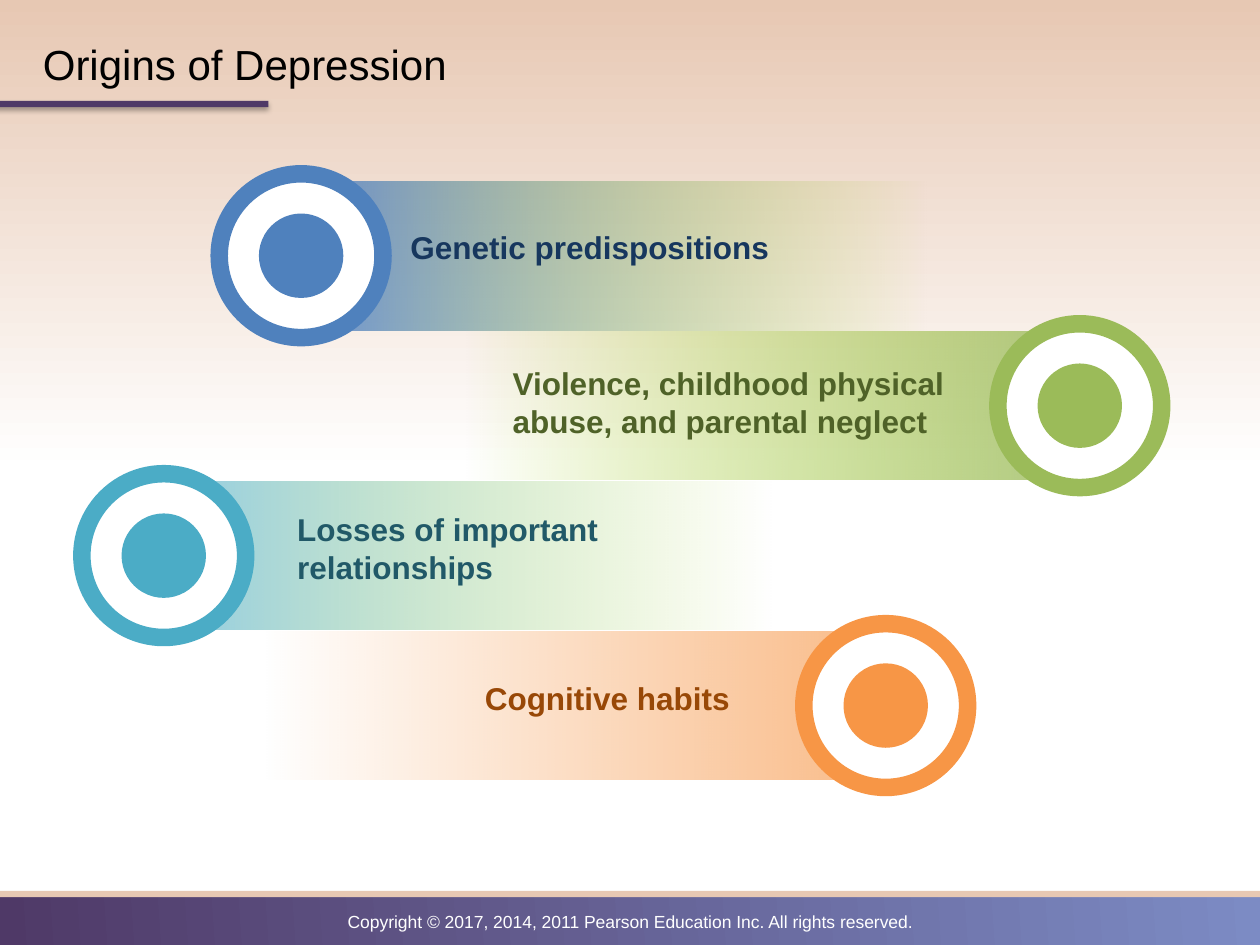
"""Build the slide on the origins of depression."""
from lxml import etree
from pptx import Presentation
from pptx.dml.color import RGBColor
from pptx.enum import shapes, text
from pptx.oxml import ns
from pptx.util import Inches, Pt

COLORS = {
    "white": "FFFFFF", "black": "000000", "sand": "E7C8B3",
    "plum": "4F3967", "periwinkle": "7C8BC4", "lime": "99CC00",
    "blue": "4F81BD", "navy": "17375E", "green": "9BBB59", "moss": "4F6228",
    "teal": "4BACC6", "deep teal": "215968", "orange": "F79646", "rust": "984807",
}
TITLE = "Origins of Depression"
COPYRIGHT = "Copyright © 2017, 2014, 2011 Pearson Education Inc. All rights reserved."
ORIGINS = [
    dict(label="Genetic predispositions", color="blue", ink="navy", fade="lime",
         alpha=75, side="left", bar=2.8, ring=1.74, box=(3.16, 1.76, 3.33, 0.4)),
    dict(label="Violence, childhood physical abuse, and parental neglect",
         color="green", ink="moss", fade="lime",
         alpha=75, side="right", bar=3.68, ring=7.92, box=(3.97, 2.84, 4.08, 0.71)),
    dict(label="Losses of important relationships", color="teal", ink="deep teal",
         fade="lime", alpha=56, side="left", bar=1.59, ring=0.65,
         box=(2.26, 4, 3.85, 0.71)),
    dict(label="Cognitive habits", color="orange", ink="rust", fade="orange",
         alpha=60, side="right", bar=2.09, ring=6.38, box=(3.75, 5.34, 2.3, 0.4)),
]
BAR_TOP, BAR_PITCH, BAR_WIDTH, BAR_HEIGHT = 1.44, 1.19, 4.56, 1.18
RING, DOT = 1.3, 0.67


def rgb(name):
    return RGBColor.from_string(COLORS[name])


def set_gradient(fill, stops, angle):
    fill.gradient()
    fill.gradient_angle = angle
    for stop, (position, color, alpha) in zip(fill.gradient_stops, stops):
        stop.position = position
        stop.color.rgb = rgb(color)
        if alpha < 100:
            tint = stop._gs.find(ns.qn("a:srgbClr"))
            etree.SubElement(tint, ns.qn("a:alpha"), val=str(alpha * 1000))


def add_shape(page, kind, place, color=None, line=None):
    shape = page.shapes.add_shape(kind, *map(Inches, place))
    shape.shadow.inherit = False
    if color:
        shape.fill.solid()
        shape.fill.fore_color.rgb = rgb(color)
    if line:
        shape.line.color.rgb = rgb(line)
        shape.line.width = Pt(10)
    else:
        shape.line.fill.background()
    return shape


def style(paragraph, size, color, align, bold=False):
    paragraph.alignment = align
    font = paragraph.font
    font.name, font.size, font.bold = "Arial", Pt(size), bold
    font.color.rgb = rgb(color)


def add_text(page, words, place, size, color, align, bold=False):
    box = page.shapes.add_textbox(*map(Inches, place))
    frame = box.text_frame
    frame.word_wrap = True
    frame.text = words
    style(frame.paragraphs[0], size, color, align, bold)


def add_title(page):
    title = page.shapes.title
    title.left, title.top, title.width, title.height = map(Inches, (0.24, 0.21, 8.5, 0.59))
    title.text_frame.text = TITLE
    title.text_frame.vertical_anchor = text.MSO_ANCHOR.MIDDLE
    style(title.text_frame.paragraphs[0], 24, "black", text.PP_ALIGN.LEFT)
    rule = add_shape(page, shapes.MSO_SHAPE.RECTANGLE, (-0.19, 0.8, 2.32, 0.05), "plum")
    effects = rule._element.spPr.find(ns.qn("a:effectLst"))
    shadow = etree.SubElement(effects, ns.qn("a:outerShdw"), blurRad=str(Pt(3.1)),
                              dist=str(Pt(1.8)), dir="5400000", rotWithShape="0")
    shade = etree.SubElement(shadow, ns.qn("a:srgbClr"), val=COLORS["black"])
    etree.SubElement(shade, ns.qn("a:alpha"), val="35000")


def add_footer(page):
    band = add_shape(page, shapes.MSO_SHAPE.RECTANGLE, (0, 7.08, 10, 0.45))
    set_gradient(band.fill, [(0, "plum", 100), (1, "periwinkle", 100)], 4)
    add_shape(page, shapes.MSO_SHAPE.RECTANGLE, (0, 7.07, 10.05, 0.05), "sand")
    add_text(page, COPYRIGHT, (0, 7.18, 10, 0.27), 10, "white", text.PP_ALIGN.CENTER)


def add_bar(page, origin, top):
    bar = add_shape(page, shapes.MSO_SHAPE.RECTANGLE,
                    (origin["bar"], top, BAR_WIDTH, BAR_HEIGHT))
    ends = [(origin["fade"], 0), (origin["color"], origin["alpha"])]
    if origin["side"] == "left":
        ends.reverse()
    set_gradient(bar.fill, [(i, *end) for i, end in enumerate(ends)], 0)
    add_text(page, origin["label"], origin["box"], 18, origin["ink"],
             text.PP_ALIGN.LEFT, True)


def add_target(page, origin, middle):
    center = origin["ring"] + RING / 2
    for size, color, line in ((RING, "white", origin["color"]),
                              (DOT, origin["color"], None)):
        add_shape(page, shapes.MSO_SHAPE.OVAL,
                  (center - size / 2, middle - size / 2, size, size), color, line)


def main():
    deck = Presentation()
    deck.slide_width, deck.slide_height = Inches(10), Inches(7.5)
    page = deck.slides.add_slide(deck.slide_layouts[5])
    set_gradient(page.background.fill, [(0.5, "white", 100), (1, "sand", 100)], 90)
    add_footer(page)
    add_title(page)
    tops = [BAR_TOP + i * BAR_PITCH for i in range(len(ORIGINS))]
    for origin, top in zip(ORIGINS, tops):
        add_bar(page, origin, top)
    for origin, top in zip(ORIGINS, tops):
        add_target(page, origin, top + BAR_HEIGHT / 2)
    deck.save("out.pptx")


if __name__ == "__main__":
    main()
